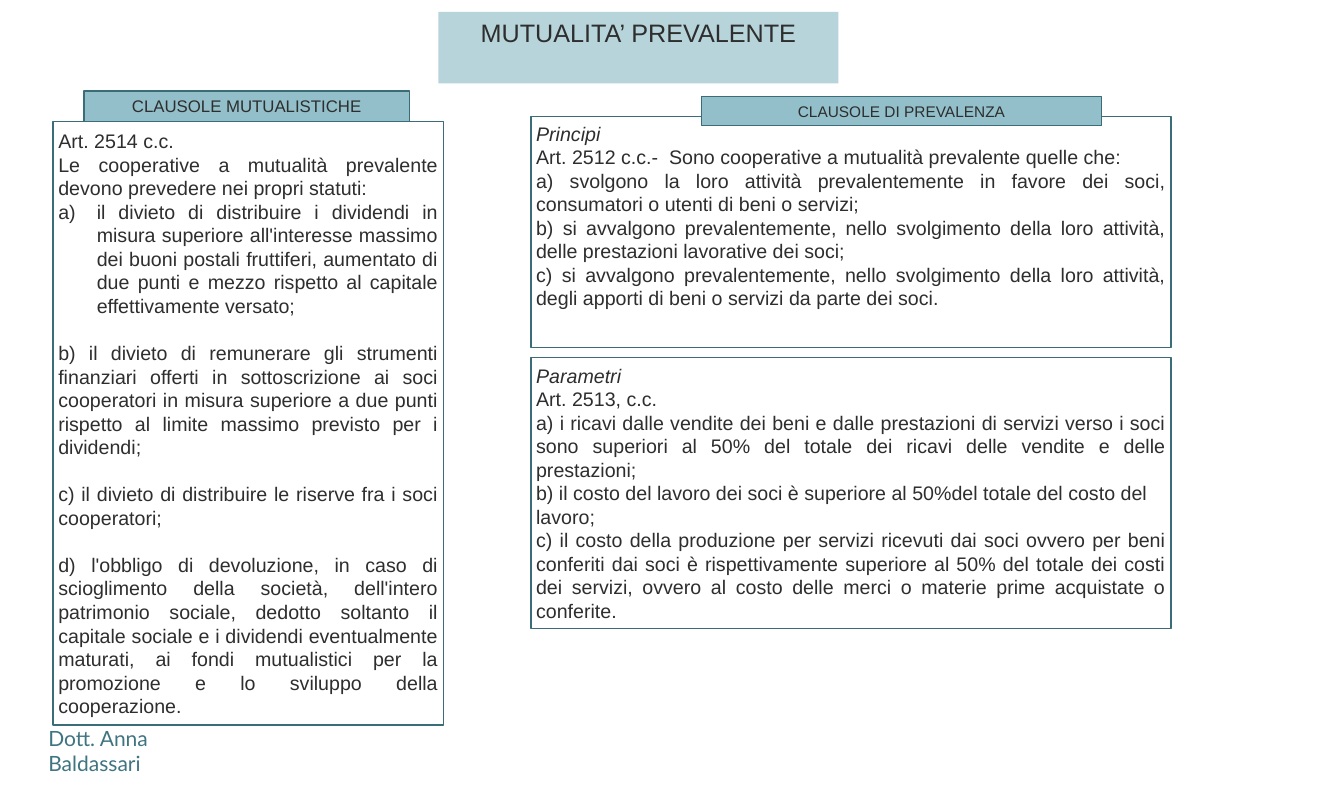
from dataclasses import dataclass

from lxml import etree
from pptx import Presentation
from pptx.dml.color import RGBColor
from pptx.enum import shapes, text
from pptx.oxml.ns import qn
from pptx.util import Cm, Pt

LEFT, CENTER, JUSTIFY = text.PP_ALIGN.LEFT, text.PP_ALIGN.CENTER, text.PP_ALIGN.JUSTIFY
TOP, MIDDLE = text.MSO_ANCHOR.TOP, text.MSO_ANCHOR.MIDDLE
CM_PER_INCH = 2.54


@dataclass(frozen=True)
class Theme:
    ink: str = "2D2E2D"
    border: str = "3B6D79"
    title_fill: str = "B7D4DB"
    tab_fill: str = "92BFCA"
    paper: str = "FFFFFF"
    author: str = "3F7481"
    font: str = "Arial"
    author_font: str = "Lato"
    title: float = 18
    body: float = 14
    tab: float = 12
    small_tab: float = 11
    author_size: float = 15
    leading: float = 16.8
    inset: float = 0.13


@dataclass(frozen=True)
class Para:
    words: str
    align: int = JUSTIFY
    italic: bool = False
    numbered: bool = False
    gap: bool = False


T = Theme()

MUTUAL = [
    Para("Art. 2514 c.c.", LEFT),
    Para("Le cooperative a mutualità prevalente devono prevedere nei propri statuti:"),
    Para("il divieto di distribuire i dividendi in misura superiore all'interesse massimo "
         "dei buoni postali fruttiferi, aumentato di due punti e mezzo rispetto al capitale "
         "effettivamente versato;", numbered=True),
    Para("b) il divieto di remunerare gli strumenti finanziari offerti in sottoscrizione ai "
         "soci cooperatori in misura superiore a due punti rispetto al limite massimo "
         "previsto per i dividendi;", gap=True),
    Para("c) il divieto di distribuire le riserve fra i soci cooperatori;", gap=True),
    Para("d) l'obbligo di devoluzione, in caso di scioglimento della società, dell'intero "
         "patrimonio sociale, dedotto soltanto il capitale sociale e i dividendi "
         "eventualmente maturati, ai fondi mutualistici per la promozione e lo sviluppo "
         "della cooperazione.", gap=True),
]
PRINCIPLES = [
    Para("Principi", LEFT, italic=True),
    Para("Art. 2512 c.c.-  Sono cooperative a mutualità prevalente quelle che:", LEFT),
    Para("a) svolgono la loro attività prevalentemente in favore dei soci, consumatori o "
         "utenti di beni o servizi;"),
    Para("b) si avvalgono prevalentemente, nello svolgimento della loro attività, delle "
         "prestazioni lavorative dei soci;"),
    Para("c) si avvalgono prevalentemente, nello svolgimento della loro attività, degli "
         "apporti di beni o servizi da parte dei soci."),
]
PARAMETERS = [
    Para("Parametri", LEFT, italic=True),
    Para("Art. 2513, c.c.", LEFT),
    Para("a) i ricavi dalle vendite dei beni e dalle prestazioni di servizi verso i soci sono "
         "superiori al 50% del totale dei ricavi delle vendite e delle prestazioni;"),
    Para("b) il costo del lavoro dei soci è superiore al 50%del totale del costo del lavoro;",
         LEFT),
    Para("c) il costo della produzione per servizi ricevuti dai soci ovvero per beni conferiti "
         "dai soci è rispettivamente superiore al 50% del totale dei costi dei servizi, "
         "ovvero al costo delle merci o materie prime acquistate o conferite."),
]


def frame(sp, anchor):
    tf = sp.text_frame
    tf.word_wrap = True
    tf.vertical_anchor = anchor
    tf.margin_left = tf.margin_right = tf.margin_top = tf.margin_bottom = Cm(T.inset)
    return tf


def add_run(p, words, size, color=T.ink, font=T.font, italic=False):
    r = p.add_run()
    r.text = words
    r.font.size, r.font.name, r.font.italic = Pt(size), font, italic
    r.font.color.rgb = RGBColor.from_string(color)


def rectangle(s, box, fill, border=None, anchor=MIDDLE):
    """Add a flat rectangle and return its text frame."""
    sp = s.shapes.add_shape(shapes.MSO_SHAPE.RECTANGLE, *map(Cm, box))
    sp.shadow.inherit = False
    sp.fill.solid()
    sp.fill.fore_color.rgb = RGBColor.from_string(fill)
    if border:
        sp.line.color.rgb = RGBColor.from_string(border)
        sp.line.width = Pt(1)
    else:
        sp.line.fill.background()
    return frame(sp, anchor)


def number_by_letter(p):
    pPr = p._p.get_or_add_pPr()
    pPr.set("marL", str(Cm(0.97)))
    pPr.set("indent", str(-Cm(0.97)))
    etree.SubElement(pPr, qn("a:buFont"), typeface=T.font)
    etree.SubElement(pPr, qn("a:buAutoNum"), type="alphaLcParenR")


def clause_box(s, box, paras, anchor=MIDDLE):
    tf = rectangle(s, box, T.paper, T.border, anchor)
    for i, para in enumerate(paras):
        p = tf.add_paragraph() if i else tf.paragraphs[0]
        p.alignment = para.align
        p.line_spacing = Pt(T.leading)
        p.space_before = Pt(T.leading if para.gap else 0)
        if para.numbered:
            number_by_letter(p)
        add_run(p, para.words, T.body, italic=para.italic)


def heading(s, box, words, size, fill, border=None, anchor=MIDDLE):
    p = rectangle(s, box, fill, border, anchor).paragraphs[0]
    p.alignment = CENTER
    add_run(p, words, size)


def mutual_column(s, x, y, w, h):
    tab_h = 0.77
    clause_box(s, (x, y + tab_h, w, h - tab_h), MUTUAL)
    heading(s, (x + 0.78, y, 8.2, tab_h), "CLAUSOLE MUTUALISTICHE", T.tab,
            T.tab_fill, T.border)


def prevalence_column(s, x, y, w, h):
    first_top, first_h, gap = 0.5, 5.82, 0.26
    second_top = first_top + first_h + gap
    clause_box(s, (x, y + first_top, w, first_h), PRINCIPLES, TOP)
    clause_box(s, (x, y + second_top, w, h - second_top), PARAMETERS)
    heading(s, (x + 4.3, y, 10.08, 0.74), "CLAUSOLE DI PREVALENZA", T.small_tab,
            T.tab_fill, T.border)


def author_line(s, *box):
    tf = frame(s.shapes.add_textbox(*map(Cm, box)), TOP)
    add_run(tf.paragraphs[0], "Dott. Anna Baldassari", T.author_size, T.author,
            T.author_font)


def main():
    prs = Presentation()
    prs.slide_width = Cm(40 / 3 * CM_PER_INCH)
    prs.slide_height = Cm(63 / 8 * CM_PER_INCH)
    s = prs.slides.add_slide(prs.slide_layouts[6])
    author_line(s, 1.09, 18.15, 4.8, 1.04)
    heading(s, (11.05, 0.3, 10.08, 1.8), "MUTUALITA’ PREVALENTE", T.title,
            T.title_fill, anchor=TOP)
    prevalence_column(s, 13.38, 2.43, 16.13, 13.4)
    mutual_column(s, 1.34, 2.29, 9.83, 15.98)
    prs.save("out.pptx")


if __name__ == "__main__":
    main()
